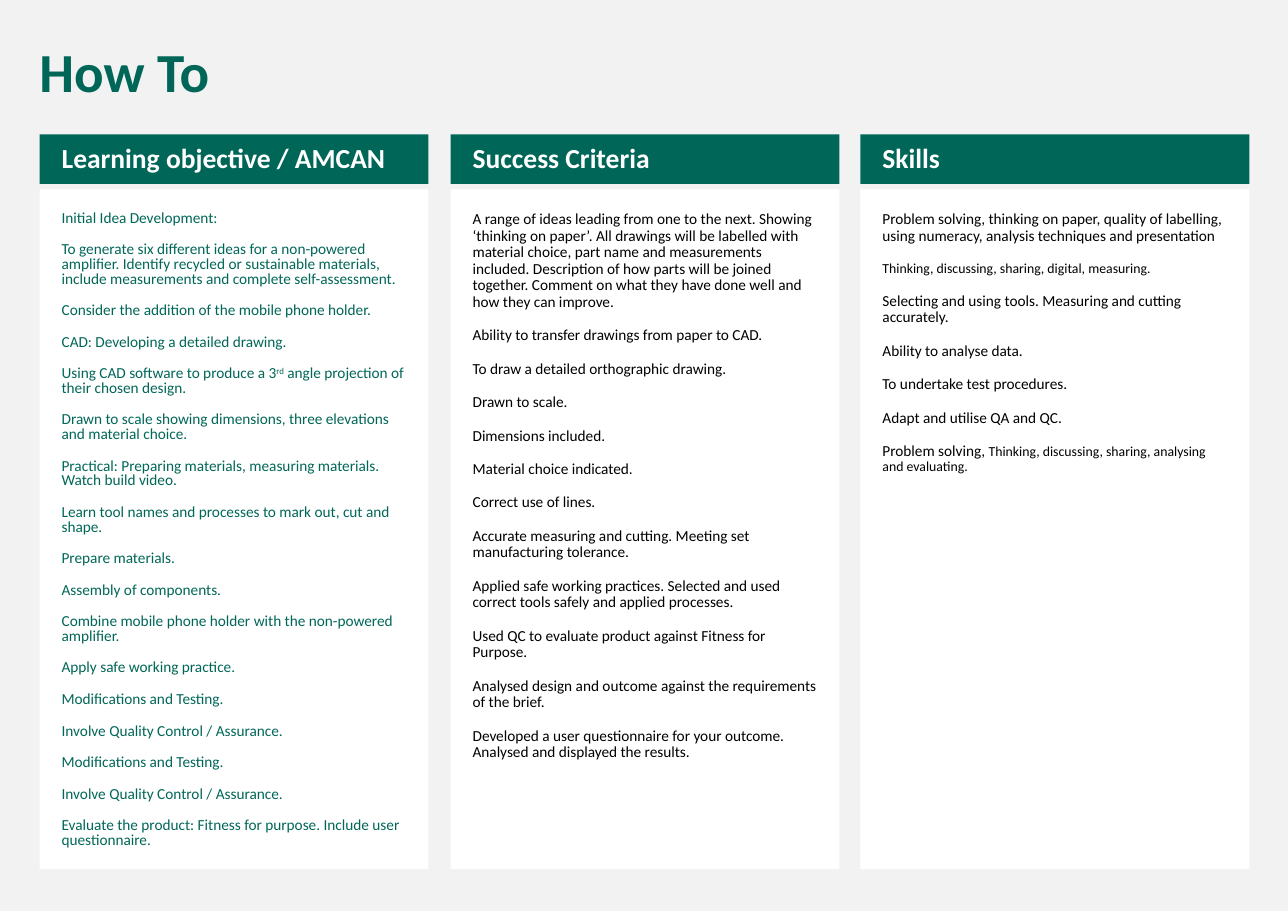
from pptx import Presentation
from pptx.dml.color import RGBColor as RGB
from pptx.enum.shapes import MSO_SHAPE as Shape
from pptx.enum.text import MSO_ANCHOR as Anchor, PP_ALIGN as Align
from pptx.util import Inches, Pt

COLOURS = {"page": "F2F2F2", "green": "006758", "white": "FFFFFF", "black": "000000"}
WIDTH = 3.53
PAD = (0.2, 0.2, 0.2, 0.2)
BAR_PAD = (0.2, 0.05, 0.1, 0.05)

GOALS = [
    "Initial Idea Development:",
    "To generate six different ideas for a non-powered amplifier. Identify recycled or "
    "sustainable materials, include measurements and complete self-assessment.",
    "Consider the addition of the mobile phone holder.",
    "CAD: Developing a detailed drawing.",
    [("Using CAD software to produce a 3", {}), ("rd", {"raised": True}),
     (" angle projection of their chosen design.", {})],
    "Drawn to scale showing dimensions, three elevations and material choice.",
    "Practical: Preparing materials, measuring materials. Watch build video.",
    "Learn tool names and processes to mark out, cut and shape.",
    "Prepare materials.",
    "Assembly of components.",
    "Combine mobile phone holder with the non-powered amplifier.",
    "Apply safe working practice.",
    *["Modifications and Testing.", "Involve Quality Control / Assurance."] * 2,
    "Evaluate the product: Fitness for purpose. Include user questionnaire.",
]
CRITERIA = [
    "A range of ideas leading from one to the next. Showing ‘thinking on paper’. All drawings "
    "will be labelled with material choice, part name and measurements included. Description "
    "of how parts will be joined together. Comment on what they have done well and how they "
    "can improve.",
    "Ability to transfer drawings from paper to CAD.",
    "To draw a detailed orthographic drawing.",
    "Drawn to scale.",
    "Dimensions included.",
    "Material choice indicated.",
    "Correct use of lines.",
    "Accurate measuring and cutting. Meeting set manufacturing tolerance.",
    "Applied safe working practices. Selected and used correct tools safely and applied "
    "processes.",
    "Used QC to evaluate product against Fitness for Purpose.",
    "Analysed design and outcome against the requirements of the brief.",
    "Developed a user questionnaire for your outcome. Analysed and displayed the results.",
]
SKILLS = [
    "Problem solving, thinking on paper, quality of labelling, using numeracy, analysis "
    "techniques and presentation",
    [("Thinking, discussing, sharing, digital, measuring.", {"size": 9})],
    "Selecting and using tools. Measuring and cutting accurately.",
    "Ability to analyse data.",
    "To undertake test procedures.",
    "Adapt and utilise QA and QC.",
    [("Problem solving, ", {}),
     ("Thinking, discussing, sharing, analysing and evaluating.", {"size": 9})],
]
COLUMNS = [
    (0.36, "Learning objective / AMCAN", GOALS, "green", 0.8),
    (4.09, "Success Criteria", CRITERIA, "black", 0.9),
    (7.81, "Skills", SKILLS, "black", 0.9),
]


def colour(name):
    return RGB.from_string(COLOURS[name])


def add_run(para, text, size=None, raised=False):
    run = para.add_run()
    run.text = text
    if size:
        run.font.size = Pt(size)
    if raised:
        run.font._element.set("baseline", "30000")


def write(frame, items, size, ink, bold=False, line=0.9):
    frame.word_wrap = True
    for i, item in enumerate(items):
        para = frame.add_paragraph() if i else frame.paragraphs[0]
        para.alignment = Align.LEFT
        para.line_spacing = line
        para.space_before = Pt(11)
        font = para.font
        font.name, font.size, font.bold = "Calibri", Pt(size), bold
        font.color.rgb = colour(ink)
        for text, style in [(item, {})] if isinstance(item, str) else item:
            add_run(para, text, **style)


def add_panel(slide, left, top, height, fill, pad, anchor):
    panel = slide.shapes.add_shape(
        Shape.RECTANGLE, Inches(left), Inches(top), Inches(WIDTH), Inches(height))
    panel.shadow.inherit = False
    panel.fill.solid()
    panel.fill.fore_color.rgb = colour(fill)
    panel.line.fill.background()
    frame = panel.text_frame
    frame.vertical_anchor = anchor
    (frame.margin_left, frame.margin_top,
     frame.margin_right, frame.margin_bottom) = map(Inches, pad)
    return frame


def add_column(slide, left, head, items, ink, line):
    body = add_panel(slide, left, 1.72, 6.17, "white", PAD, Anchor.TOP)
    write(body, items, 10, ink, line=line)
    bar = add_panel(slide, left, 1.22, 0.45, "green", BAR_PAD, Anchor.MIDDLE)
    write(bar, [head], 18, "white", bold=True)


def add_title(slide, text):
    box = slide.shapes.add_textbox(Inches(0.26), Inches(0.36), Inches(11.08), Inches(0.65))
    write(box.text_frame, [text], 36, "green", bold=True)


def main():
    deck = Presentation()
    deck.slide_width, deck.slide_height = Inches(11.69), Inches(8.27)
    slide = deck.slides.add_slide(deck.slide_layouts[6])
    slide.background.fill.solid()
    slide.background.fill.fore_color.rgb = colour("page")
    for column in COLUMNS:
        add_column(slide, *column)
    add_title(slide, "How To")
    deck.save("out.pptx")


if __name__ == "__main__":
    main()
